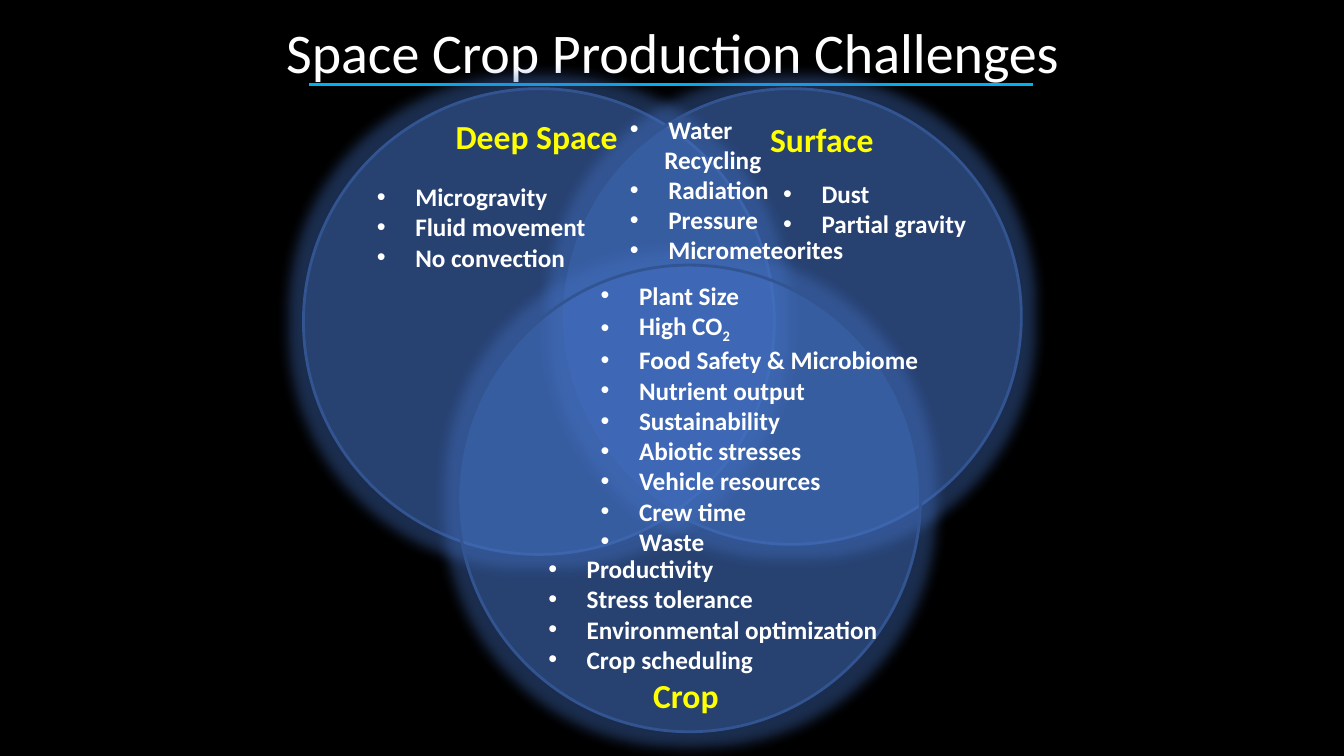
from pptx import Presentation
from pptx.dml.color import RGBColor
from pptx.enum.shapes import MSO_CONNECTOR, MSO_SHAPE
from pptx.enum.text import MSO_ANCHOR, MSO_AUTO_SIZE, PP_ALIGN
from pptx.oxml.ns import qn
from pptx.util import Inches, Pt
from lxml.etree import SubElement

# Content
TITLE = "Space Crop Production Challenges"
RULE = (3.06, 10.25, 0.84)  # left, right, height on slide
CIRCLES = [  # left, top, width, height
    (3.01, 0.88, 4.67, 4.62),
    (5.57, 0.88, 4.56, 4.52),
    (4.54, 2.63, 4.59, 4.63),
]
HEADS = [
    ("Deep Space", (4.42, 1.1, 1.83, 0.5)),
    ("Surface", (7.54, 1.13, 1.24, 0.5)),
    ("Crop", (6.38, 6.65, 0.86, 0.5)),
]
CARRY = "Recycling"  # second line of the "Water" item, without a bullet
LISTS = [  # area, items; an item may be (text, subscript)
    ((3.64, 1.75, 2.28, 1.01),
     ["Microgravity", "Fluid movement", "No convection"]),
    ((6.15, 1.08, 2.33, 1.92),
     ["Water", CARRY, "Radiation", "Pressure", "Micrometeorites"]),
    ((7.67, 1.72, 2.03, 1.04), ["Dust", "Partial gravity"]),
    ((5.34, 5.44, 3.89, 1.31),
     ["Productivity", "Stress tolerance", "Environmental optimization",
      "Crop scheduling"]),
    ((5.86, 2.73, 3.38, 3.13),
     ["Plant Size", ("High CO", "2"), "Food Safety & Microbiome",
      "Nutrient output", "Sustainability", "Abiotic stresses",
      "Vehicle resources", "Crew time", "Waste"]),
]

THEME = {
    "font": "Calibri",
    "back": "000000", "text": "FFFFFF", "head": "FFFF00",
    "rule": "00B0F0", "fill": "4472C4", "edge": "325491",
    "title_size": 40, "head_size": 24, "item_size": 18,
    "fill_alpha": 30, "glow_alpha": 40, "glow": 0.25,
    "hang": 0.38, "carry": 0.34,
}


def color(key):
    return RGBColor.from_string(THEME[key])


def add_alpha(node, share):
    SubElement(node, qn("a:alpha")).set("val", str(share * 1000))


def add_run(para, text, size, tint, bold=True):
    run = para.add_run()
    run.text = text
    run.font.name = THEME["font"]
    run.font.size = Pt(THEME[size])
    run.font.bold = bold
    run.font.color.rgb = color(tint)
    return run


def add_box(slide, area, wrap=False):
    frame = slide.shapes.add_textbox(*map(Inches, area)).text_frame
    frame.word_wrap = wrap
    frame.auto_size = MSO_AUTO_SIZE.SHAPE_TO_FIT_TEXT
    return frame


def add_title(slide):
    frame = add_box(slide, (0.92, -0.18, 11.5, 1.45), True)
    frame.auto_size = MSO_AUTO_SIZE.NONE
    frame.vertical_anchor = MSO_ANCHOR.MIDDLE
    para = frame.paragraphs[0]
    para.alignment = PP_ALIGN.CENTER
    para.line_spacing = 0.9
    add_run(para, TITLE, "title_size", "text", False)


def add_rule(slide):
    left, right, top = map(Inches, RULE)
    rule = slide.shapes.add_connector(
        MSO_CONNECTOR.STRAIGHT, left, top, right, top)
    rule.line.color.rgb = color("rule")
    rule.line.width = Pt(2.5)
    SubElement(rule._element.spPr, qn("a:effectLst"))


def add_circle(slide, area):
    disc = slide.shapes.add_shape(MSO_SHAPE.OVAL, *map(Inches, area))
    disc.fill.solid()
    disc.fill.fore_color.rgb = color("fill")
    disc.line.color.rgb = color("edge")
    disc.line.width = Pt(2)
    disc.shadow.inherit = False
    props = disc._element.spPr
    add_alpha(props.find(qn("a:solidFill"))[0], THEME["fill_alpha"])
    # Soft halo around the circle
    glow = SubElement(props.find(qn("a:effectLst")), qn("a:glow"))
    glow.set("rad", str(Inches(THEME["glow"])))
    tint = SubElement(glow, qn("a:srgbClr"))
    tint.set("val", THEME["fill"])
    add_alpha(tint, THEME["glow_alpha"])


def add_list(slide, area, items):
    wide = area[2] > 3.5  # only the broad bottom list wraps
    frame = add_box(slide, area, wide)
    for num, item in enumerate(items):
        para = frame.paragraphs[0] if num == 0 else frame.add_paragraph()
        props = para._p.get_or_add_pPr()
        if item == CARRY:
            props.set("marL", str(Inches(THEME["carry"])))
            props.set("indent", "0")
        else:
            props.set("marL", str(Inches(THEME["hang"])))
            props.set("indent", str(-Inches(THEME["hang"])))
            SubElement(props, qn("a:buFont")).set("typeface", "Arial")
            SubElement(props, qn("a:buChar")).set("char", "•")
        text, sub = item if isinstance(item, tuple) else (item, "")
        add_run(para, text, "item_size", "text")
        if sub:
            run = add_run(para, sub, "item_size", "text")
            run.font._element.set("baseline", "-25000")


def main():
    deck = Presentation()
    deck.slide_width, deck.slide_height = Inches(13.33), Inches(7.5)
    slide = deck.slides.add_slide(deck.slide_layouts[6])
    slide.background.fill.solid()
    slide.background.fill.fore_color.rgb = color("back")

    # Title and rule lie behind the circles
    add_title(slide)
    add_rule(slide)
    for area in CIRCLES:
        add_circle(slide, area)

    # Labels and lists
    for text, area in HEADS:
        para = add_box(slide, area).paragraphs[0]
        add_run(para, text, "head_size", "head")
    for area, items in LISTS:
        add_list(slide, area, items)
    deck.save("out.pptx")


if __name__ == "__main__":
    main()
